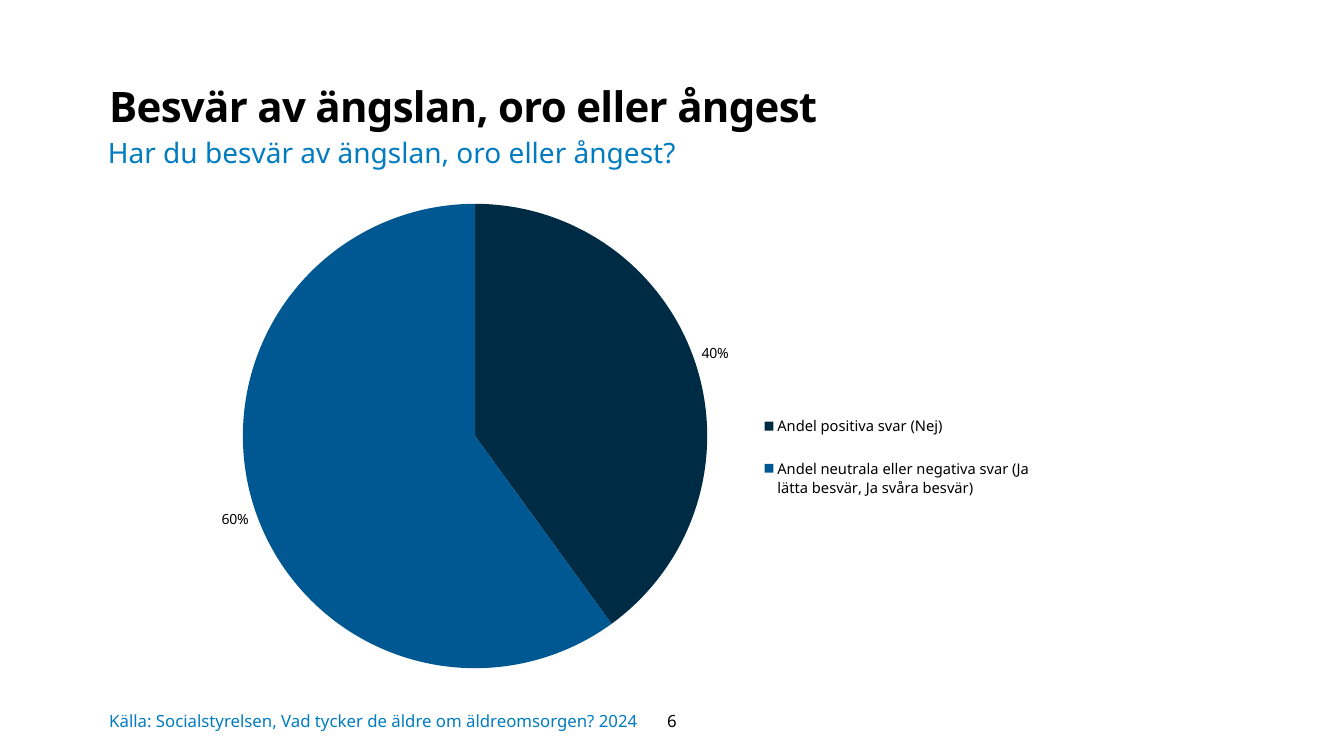
from lxml import etree
from pptx import Presentation
from pptx.chart.data import CategoryChartData
from pptx.dml.color import RGBColor
from pptx.enum.chart import XL_CHART_TYPE as ChartType
from pptx.enum.chart import XL_LABEL_POSITION as LabelPosition
from pptx.enum.chart import XL_LEGEND_POSITION as LegendPosition
from pptx.enum.text import MSO_ANCHOR as Anchor
from pptx.enum.text import MSO_AUTO_SIZE as AutoSize
from pptx.enum.text import PP_ALIGN as Align
from pptx.oxml.ns import qn
from pptx.util import Pt

FONT = "Noto Sans"
BLACK, BLUE = "000000", "017CC1"
ANSWERS = [
    ("Andel positiva svar (Nej)", 40, "002B45"),
    ("Andel neutrala eller negativa svar (Ja lätta besvär, Ja svåra besvär)", 60, "005892"),
]


def paint(colour_format, colour):
    colour_format.rgb = RGBColor.from_string(colour)


def set_font(font, size, colour=BLACK, bold=False):
    for name, value in {"name": FONT, "size": Pt(size), "bold": bold}.items():
        setattr(font, name, value)
    paint(font.color, colour)


def set_layout(parent, index, fractions, inner=False):
    """Place a chart part by its x, y, w, h as fractions of the chart."""
    for old in parent.findall(qn("c:layout")):
        parent.remove(old)
    layout = etree.Element(qn("c:layout"))
    manual = etree.SubElement(layout, qn("c:manualLayout"))
    settings = {"layoutTarget": "inner"} if inner else {}
    settings.update(xMode="edge", yMode="edge")
    settings.update(zip("xywh", fractions))
    for tag, value in settings.items():
        etree.SubElement(manual, qn(f"c:{tag}")).set("val", str(value))
    parent.insert(index, layout)


class SurveySlide:
    def __init__(self, deck):
        self.page = deck.slides.add_slide(deck.slide_layouts[5])

    def fill_text(self, box, text, size, colour, insets, anchor=Anchor.TOP,
                  align=Align.LEFT, bold=False):
        frame = box.text_frame
        sides = ("margin_left", "margin_top", "margin_right", "margin_bottom")
        formats = dict(zip(sides, map(Pt, insets)))
        formats.update(word_wrap=True, auto_size=AutoSize.NONE, vertical_anchor=anchor)
        for name, value in formats.items():
            setattr(frame, name, value)
        para = frame.paragraphs[0]
        para.alignment = align
        span = para.add_run()
        span.text = text
        set_font(span.font, size, colour, bold)
        return para, span

    def title(self, text, left, top, width, height):
        box = self.page.shapes.title
        for name, value in dict(left=left, top=top, width=width, height=height).items():
            setattr(box, name, Pt(value))
        para, span = self.fill_text(box, text, 30, BLACK, (0, 0, 7.2, 3.6), bold=True)
        para.line_spacing = 1.1
        span._r.get_or_add_rPr().set("spc", "-50")

    def text(self, text, place, size, colour, insets=(7.2, 3.6, 7.2, 3.6), **formats):
        box = self.page.shapes.add_textbox(*map(Pt, place))
        self.fill_text(box, text, size, colour, insets, **formats)

    def pie(self, answers, place):
        names, values, colours = zip(*answers)
        data = CategoryChartData()
        data.categories = names
        data.add_series("Series 1", values)
        chart = self.page.shapes.add_chart(ChartType.PIE, *map(Pt, place), data).chart
        chart.has_title = False
        set_font(chart.font, 10)

        plot = chart.plots[0]
        for index, colour in enumerate(colours):
            shape_format = plot.series[0].points[index].format
            shape_format.fill.solid()
            paint(shape_format.fill.fore_color, colour)
            shape_format.line.fill.background()

        labels = plot.series[0].data_labels
        label_formats = {
            "show_percentage": True,
            "show_value": False,
            "number_format": "0%",
            "number_format_is_linked": False,
            "position": LabelPosition.OUTSIDE_END,
        }
        for name, value in label_formats.items():
            setattr(labels, name, value)
        set_font(labels.font, 10)

        chart.has_legend = True
        legend = chart.legend
        legend.position = LegendPosition.RIGHT
        legend.include_in_layout = False
        set_font(legend.font, 10.5)
        set_layout(legend._element, 1, (0.63, 0.42, 0.28, 0.24))
        plot_area = chart._chartSpace.chart.plotArea
        set_layout(plot_area, 0, (0.1, 0.06, 0.48, 0.88), inner=True)


def main():
    deck = Presentation()
    deck.slide_width, deck.slide_height = Pt(960), Pt(540)
    slide = SurveySlide(deck)
    slide.title("Besvär av ängslan, oro eller ångest", 78, 54, 701, 39)
    slide.text("Har du besvär av ängslan, oro eller ångest?", (70, 93, 632, 32), 20, BLUE)
    slide.pie(ANSWERS, (101, 123, 701, 377))
    slide.text("Källa: Socialstyrelsen, Vad tycker de äldre om äldreomsorgen? 2024",
               (78, 499, 633, 32), 12, BLUE, insets=(0, 0, 0, 0), anchor=Anchor.MIDDLE)
    slide.text("6", (443.5, 500.5, 73, 29), 12, BLACK, anchor=Anchor.MIDDLE, align=Align.CENTER)
    deck.save("out.pptx")


if __name__ == "__main__":
    main()
